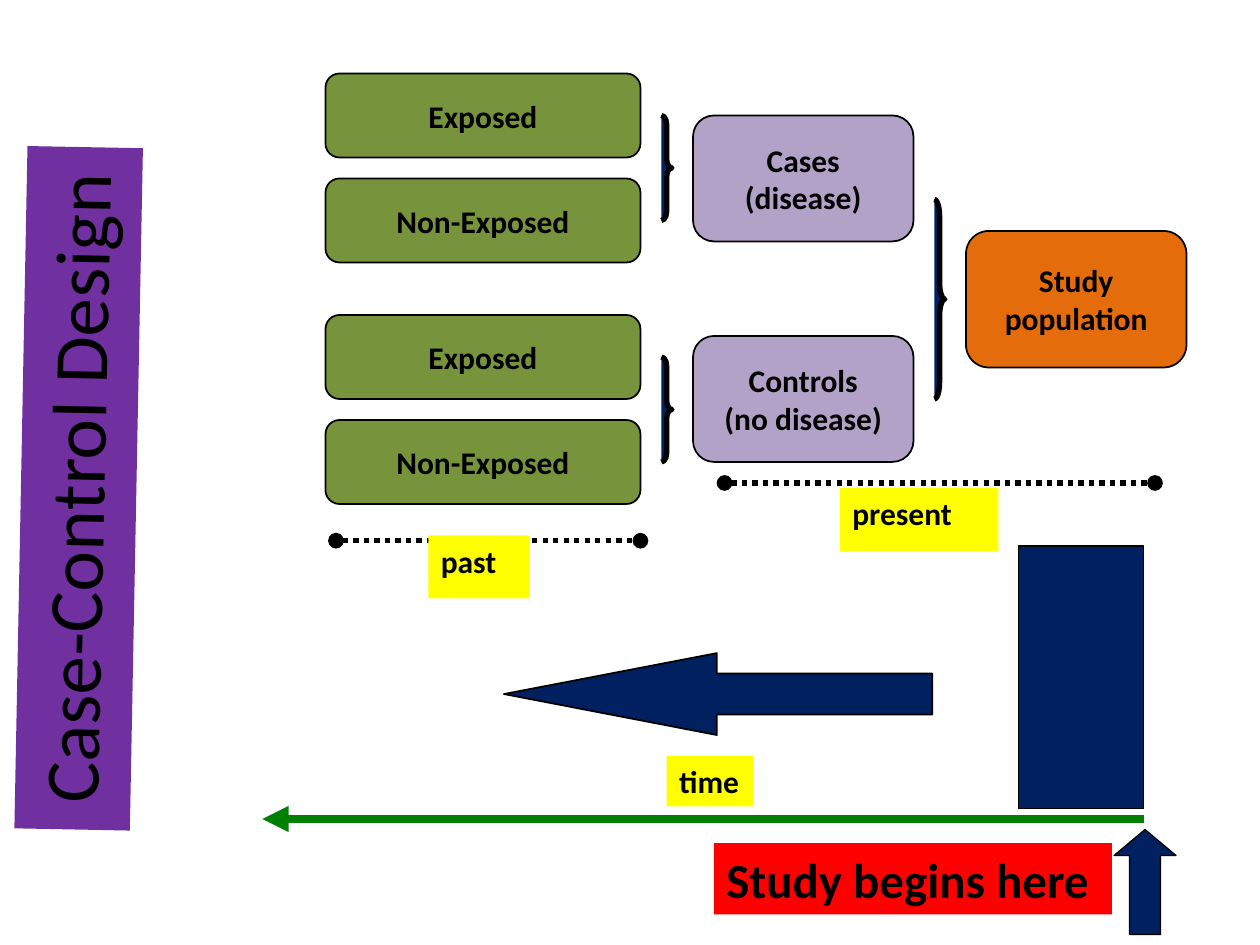
"""Build the case-control study design slide."""
import pptx
import pptx.dml.color
import pptx.enum.dml
import pptx.enum.shapes
import pptx.enum.text
import pptx.oxml
import pptx.oxml.ns
import pptx.util
from lxml import etree

RGBColor = pptx.dml.color.RGBColor
BLACK = RGBColor(0x00, 0x00, 0x00)
PURPLE = RGBColor(0x70, 0x30, 0xA0)
ORANGE = RGBColor(0xE4, 0x6C, 0x0A)
LILAC = RGBColor(0xB3, 0xA2, 0xC7)
OLIVE = RGBColor(0x77, 0x93, 0x3C)
NAVY = RGBColor(0x00, 0x20, 0x60)
YELLOW = RGBColor(0xFF, 0xFF, 0x00)
RED = RGBColor(0xFF, 0x00, 0x00)
GREEN = RGBColor(0x00, 0x80, 0x00)

SHAPE = pptx.enum.shapes.MSO_SHAPE
ALIGN = pptx.enum.text.PP_ALIGN
ANCHOR = pptx.enum.text.MSO_ANCHOR
DOTTED = pptx.enum.dml.MSO_LINE.ROUND_DOT

deck = pptx.Presentation()
deck.slide_width = pptx.util.Inches(10)
deck.slide_height = pptx.util.Inches(7.5)
page = deck.slides.add_slide(deck.slide_layouts[6])
COLUMN = deck.slide_width / 120
ROW = deck.slide_height / 90


def add_box(kind, left, top, width, height, fill, line=0, adjust=(), flip=False):
    box = page.shapes.add_shape(kind, round(left * COLUMN), round(top * ROW),
                                round(width * COLUMN), round(height * ROW))
    box.shadow.inherit = False
    box.fill.solid()
    box.fill.fore_color.rgb = fill
    if line:
        box.line.color.rgb = BLACK
        box.line.width = pptx.util.Pt(line)
    else:
        box.line.fill.background()
    for index, value in enumerate(adjust):
        box.adjustments[index] = value
    if flip:
        box.element.spPr.find(pptx.oxml.ns.qn("a:xfrm")).set("flipH", "1")
    return box


def write_text(box, text, size=18, bold=True, align=ALIGN.LEFT, anchor=ANCHOR.TOP, wrap=True):
    frame = box.text_frame
    frame.word_wrap = wrap
    frame.vertical_anchor = anchor
    for index, words in enumerate(text.split("\n")):
        para = frame.add_paragraph() if index else frame.paragraphs[0]
        para.alignment = align
        span = para.add_run()
        span.text = words
        span.font.name = "Calibri"
        span.font.size = pptx.util.Pt(size)
        span.font.bold = bold
        span.font.color.rgb = BLACK


title = add_box(SHAPE.RECTANGLE, -25, 41, 65, 11, PURPLE)
title.rotation = 271.1
write_text(title, "Case-Control Design", size=44, bold=False, align=ALIGN.CENTER)

groups = [
    ("Study\npopulation", 92, 22, 21, 13, ORANGE),
    ("Cases\n(disease)", 66, 11, 21, 12, LILAC),
    ("Controls\n(no disease)", 66, 32, 21, 12, LILAC),
]
for top in (7, 30):
    groups.append(("Exposed", 31, top, 30, 8, OLIVE))
    groups.append(("Non-Exposed", 31, top + 10, 30, 8, OLIVE))
for text, left, top, width, height, fill in groups:
    box = add_box(SHAPE.ROUNDED_RECTANGLE, left, top, width, height, fill, line=1, adjust=[0.167])
    write_text(box, text, align=ALIGN.CENTER, anchor=ANCHOR.MIDDLE, wrap=False)

for left, top, height in [(89, 19, 19), (63, 11, 10), (63, 34, 10)]:
    add_box(SHAPE.LEFT_BRACE, left, top, 1, height, NAVY, line=3,
            adjust=[height / 12, 0.5], flip=True)

add_box(SHAPE.RIGHT_ARROW, 48, 62.2, 40.8, 7.8, NAVY, line=1, adjust=[0.5, 2.6], flip=True)
add_box(SHAPE.RECTANGLE, 97, 52, 11.9, 25, NAVY, line=1)

timelines = [
    (69, 110, 46, BLACK, 3, DOTTED, {"headEnd": "oval", "tailEnd": "oval"}),
    (32, 61, 51.5, BLACK, 3, DOTTED, {"headEnd": "oval", "tailEnd": "oval"}),
    (109, 25, 78, GREEN, 5, None, {"tailEnd": "triangle"}),
]
for start, end, row, color, width, dash, tips in timelines:
    line = page.shapes.add_connector(pptx.enum.shapes.MSO_CONNECTOR.STRAIGHT,
                                     round(start * COLUMN), round(row * ROW),
                                     round(end * COLUMN), round(row * ROW))
    line.line.color.rgb = color
    line.line.width = pptx.util.Pt(width)
    if dash:
        line.line.dash_style = dash
    properties = line.element.spPr
    for tip, style in tips.items():
        outline = properties.find(pptx.oxml.ns.qn("a:ln"))
        etree.SubElement(outline, pptx.oxml.ns.qn(f"a:{tip}")).set("type", style)
    etree.SubElement(properties, pptx.oxml.ns.qn("a:effectLst"))

add_box(SHAPE.UP_ARROW, 106.1, 79, 5.9, 10, NAVY, line=0.75, adjust=[0.5, 0.42])

labels = [
    ("present", 80, 46.5, 15.1, 6, YELLOW, 18),
    ("past", 40.8, 51, 9.6, 6, YELLOW, 18),
    ("time", 63.5, 72, 8.2, 4.8, YELLOW, 18),
    ("Study begins here", 68, 80.3, 37.9, 6.8, RED, 28),
]
for text, left, top, width, height, fill, size in labels:
    box = add_box(SHAPE.RECTANGLE, left, top, width, height, fill)
    write_text(box, text, size=size)

deck.save("out.pptx")
